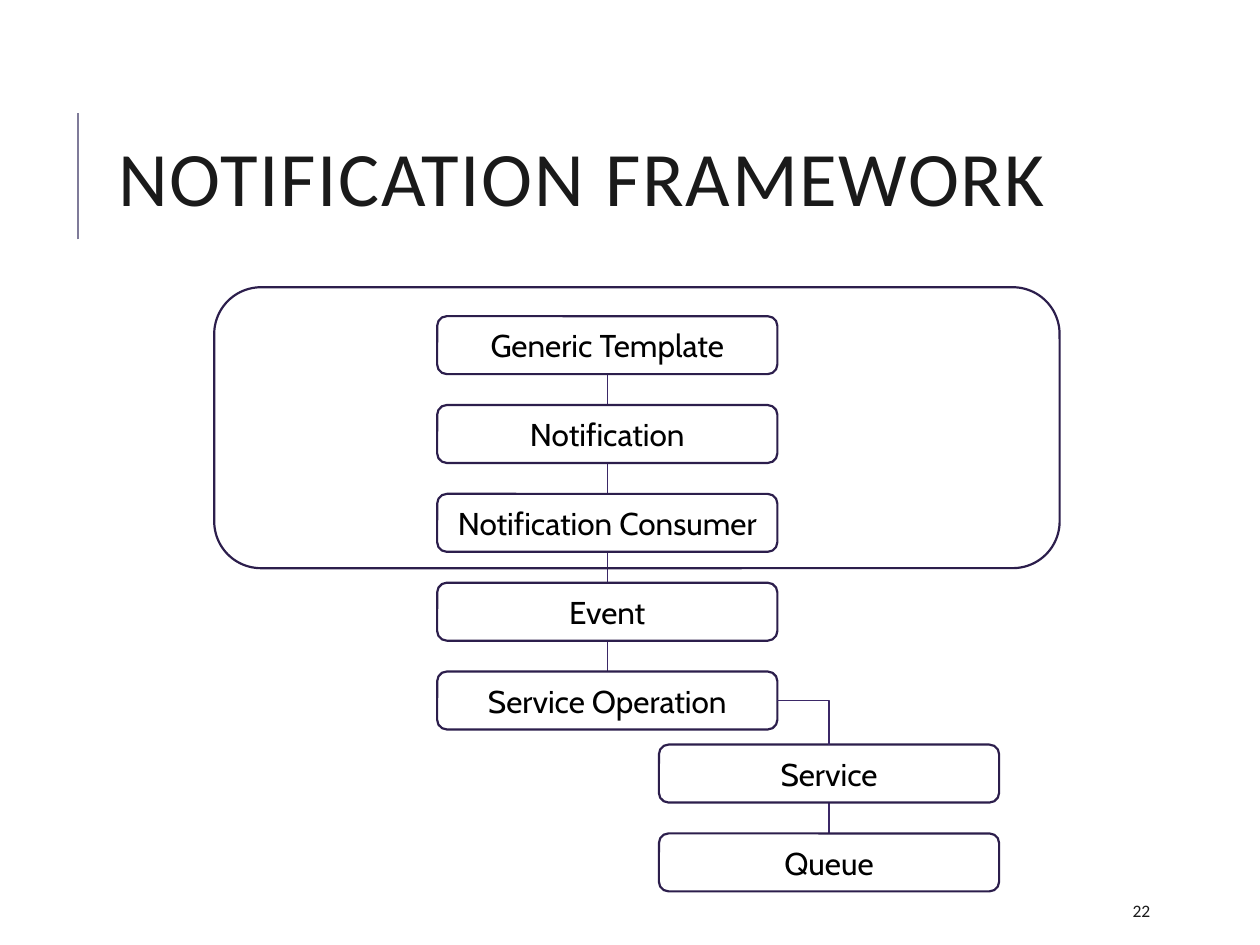
from itertools import pairwise

from pptx import Presentation
from pptx.dml.color import RGBColor
from pptx.enum.shapes import MSO_CONNECTOR, MSO_SHAPE
from pptx.enum.text import MSO_ANCHOR, PP_ALIGN
from pptx.oxml.ns import qn
from pptx.util import Inches, Pt

OUTLINE = RGBColor(0x2C, 0x1E, 0x4C)
LINK = RGBColor(0x3B, 0x28, 0x67)
ACCENT = RGBColor(0x7F, 0x7B, 0x99)
HEADING = RGBColor(0x1A, 0x1A, 0x1A)
BLACK = RGBColor(0, 0, 0)

# Grid of the diagram, in inches
BOX_WIDTH, BOX_HEIGHT = 2.7, 0.46
ROW_STEP = 0.705
MAIN_LEFT, MAIN_TOP = 3.47, 2.51
SIDE_LEFT, SIDE_TOP = 5.23, 5.91

MAIN_CHAIN = ["Generic Template", "Notification", "Notification Consumer",
              "Event", "Service Operation"]
SIDE_CHAIN = ["Service", "Queue"]


def write(frame, text, font_name, size, color):
    """Put one run in a vertically centred frame; return its paragraph and run."""
    frame.word_wrap = True
    frame.vertical_anchor = MSO_ANCHOR.MIDDLE
    paragraph = frame.paragraphs[0]
    run = paragraph.add_run()
    run.text = text
    run.font.name = font_name
    run.font.size = Pt(size)
    run.font.color.rgb = color
    return paragraph, run


def add_label(slide, area, text, size):
    label = slide.shapes.add_textbox(*map(Inches, area))
    return write(label.text_frame, text, "Calibri", size, HEADING)


def add_rounded_outline(slide, left, top, width, height):
    outline = slide.shapes.add_shape(
        MSO_SHAPE.ROUNDED_RECTANGLE, *map(Inches, (left, top, width, height)))
    outline.shadow.inherit = False
    outline.fill.background()
    outline.line.color.rgb = OUTLINE
    outline.line.width = Pt(1.25)
    return outline


def add_link(slide, start, end, color=LINK, weight=0.75, kind=MSO_CONNECTOR.STRAIGHT):
    link = slide.shapes.add_connector(kind, *map(Inches, (*start, *end)))
    link.line.color.rgb = color
    link.line.width = Pt(weight)
    properties = link._element.spPr
    properties.append(properties.makeelement(qn("a:effectLst"), {}))
    return link


def add_chain(slide, names, left, top):
    """Stack boxes on the row grid and join each to the next; return the row tops."""
    tops = [top + row * ROW_STEP for row in range(len(names))]
    middle = left + BOX_WIDTH / 2
    for upper, lower in pairwise(tops):
        add_link(slide, (middle, upper + BOX_HEIGHT), (middle, lower))
    for name, box_top in zip(names, tops):
        box = add_rounded_outline(slide, left, box_top, BOX_WIDTH, BOX_HEIGHT)
        paragraph, _ = write(box.text_frame, name, "Cabin", 18, BLACK)
        paragraph.alignment = PP_ALIGN.CENTER
    return tops


def add_corner_link(slide, start, end):
    """Run right from start, then down to end with a single bend."""
    link = add_link(slide, start, end, kind=MSO_CONNECTOR.ELBOW)
    link._element.spPr.find(qn("a:prstGeom")).set("prst", "bentConnector2")


def add_heading(slide):
    add_link(slide, (0.62, 1.9), (0.62, 0.9), ACCENT, 1.5)
    paragraph, run = add_label(
        slide, (0.84, 0.64, 7.97, 1.64), "NOTIFICATION FRAMEWORK", 44)
    paragraph.line_spacing = 0.8
    run.font._element.set("spc", "100")


def main():
    prs = Presentation()
    prs.slide_width, prs.slide_height = Inches(10), Inches(7.5)
    slide = prs.slides.add_slide(prs.slide_layouts[6])

    add_heading(slide)
    add_label(slide, (8.89, 7.08, 0.8, 0.3), "22", 10)

    main_tops = add_chain(slide, MAIN_CHAIN, MAIN_LEFT, MAIN_TOP)
    add_chain(slide, SIDE_CHAIN, SIDE_LEFT, SIDE_TOP)
    add_rounded_outline(slide, 1.7, 2.28, 6.71, 2.23)
    add_corner_link(slide,
                    (MAIN_LEFT + BOX_WIDTH, main_tops[-1] + BOX_HEIGHT / 2),
                    (SIDE_LEFT + BOX_WIDTH / 2, SIDE_TOP))

    prs.save("out.pptx")


if __name__ == "__main__":
    main()
